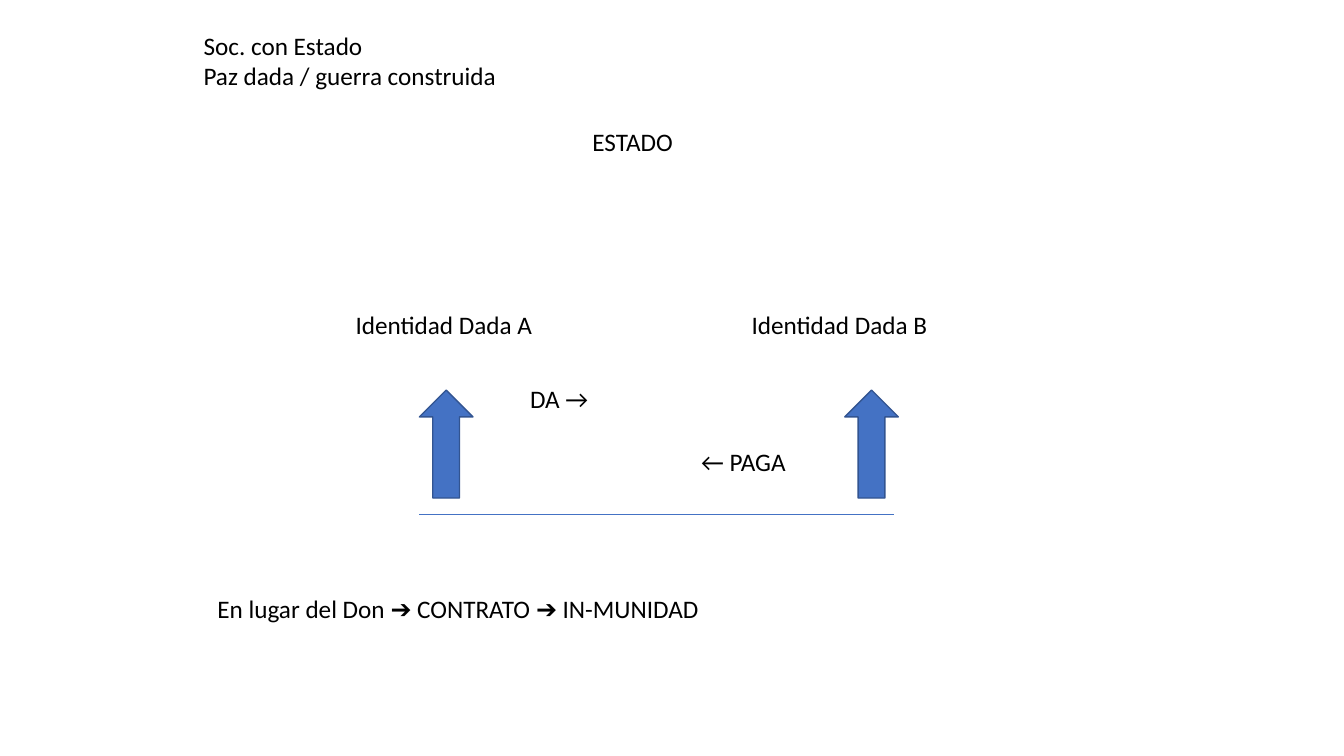
"""Build the slide on societies with a State: given peace, constructed war."""
import lxml.etree
import pptx
import pptx.util
import pptx.dml.color
import pptx.enum.shapes
import pptx.enum.text
import pptx.oxml.ns

Cm = pptx.util.Cm
Pt = pptx.util.Pt
RGB = pptx.dml.color.RGBColor.from_string

COLORS = {"text": "000000", "blue": "4472C4", "outline": "325491"}

prs = pptx.Presentation()
prs.slide_width = Cm(33.87)
prs.slide_height = Cm(19.05)
s = prs.slides.add_slide(prs.slide_layouts[6])

base = s.shapes.add_connector(
    pptx.enum.shapes.MSO_CONNECTOR.STRAIGHT, Cm(10.57), Cm(12.95), Cm(22.53), Cm(12.95)
)
base.line.color.rgb = RGB(COLORS["blue"])
base.line.width = Pt(0.5)
lxml.etree.SubElement(base._element.spPr, pptx.oxml.ns.qn("a:effectLst"))

for left in (10.57, 21.29):
    sp = s.shapes.add_shape(
        pptx.enum.shapes.MSO_SHAPE.UP_ARROW, Cm(left), Cm(9.83), Cm(1.35), Cm(2.72)
    )
    sp.shadow.inherit = False
    sp.fill.solid()
    sp.fill.fore_color.rgb = RGB(COLORS["blue"])
    sp.line.color.rgb = RGB(COLORS["outline"])
    sp.line.width = Pt(1)

labels = [
    (["Soc. con Estado", "Paz dada / guerra construida"], 4.88, 0.64, 7.98, 1.8, False),
    (["En lugar del Don ➔ CONTRATO ➔ IN-MUNIDAD"], 5.23, 14.83, 21.69, 1.02, True),
    (["Identidad Dada A"], 8.71, 7.67, 5.18, 1.02, False),
    (["Identidad Dada B"], 18.69, 7.67, 5.0, 1.02, False),
    (["ESTADO"], 14.68, 3.07, 5.41, 1.02, True),
    (["DA →"], 13.11, 9.53, 2.03, 1.02, False),
    (["← PAGA"], 17.42, 11.13, 2.72, 1.02, False),
]
for lines, left, top, width, height, wrap in labels:
    tf = s.shapes.add_textbox(Cm(left), Cm(top), Cm(width), Cm(height)).text_frame
    tf.word_wrap = wrap
    tf.auto_size = pptx.enum.text.MSO_AUTO_SIZE.SHAPE_TO_FIT_TEXT
    tf.text = "\n".join(lines)
    for p in tf.paragraphs:
        p.font.name = "Calibri"
        p.font.size = Pt(18)
        p.font.color.rgb = RGB(COLORS["text"])

prs.save("out.pptx")
